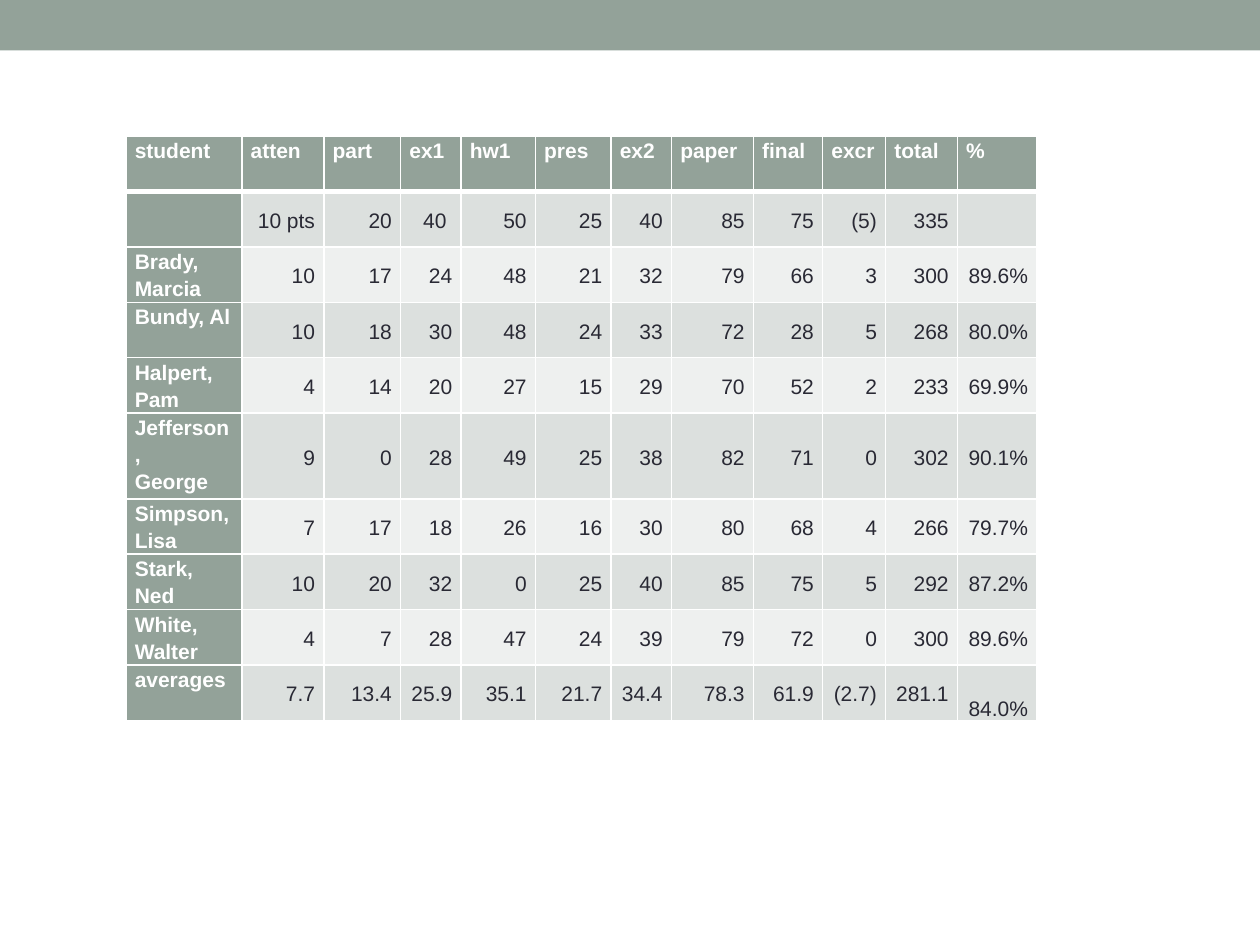
from dataclasses import dataclass

from lxml.etree import SubElement
from pptx import Presentation
from pptx.dml.color import RGBColor
from pptx.enum.shapes import MSO_SHAPE
from pptx.enum.text import MSO_ANCHOR, PP_ALIGN
from pptx.oxml.ns import qn
from pptx.util import Inches, Pt


@dataclass(frozen=True)
class Theme:
    sage: str = "93A299"
    band_dark: str = "DCE0DE"
    band_light: str = "EEF0EF"
    white: str = "FFFFFF"
    ink: str = "292934"
    font: str = "Arial"
    size: int = 12
    line_spacing: float = 1.15
    thin: int = 1
    thick: int = 3


THEME = Theme()

COLUMN_WIDTHS = [0.92, 0.65, 0.61, 0.48, 0.59, 0.6, 0.48, 0.65, 0.55, 0.5, 0.57, 0.63]
ROW_HEIGHT = 0.44
TALL_ROW_HEIGHT = 0.68
GRADES = [
    ["student", "atten", "part", "ex1", "hw1", "pres", "ex2", "paper", "final", "excr", "total", "%"],
    ["", "10 pts", "20", "40 ", "50", "25", "40", "85", "75", "(5)", "335", ""],
    ["Brady, Marcia", "10", "17", "24", "48", "21", "32", "79", "66", "3", "300", "89.6%"],
    ["Bundy, Al", "10", "18", "30", "48", "24", "33", "72", "28", "5", "268", "80.0%"],
    ["Halpert,\nPam", "4", "14", "20", "27", "15", "29", "70", "52", "2", "233", "69.9%"],
    ["Jefferson,\nGeorge", "9", "0", "28", "49", "25", "38", "82", "71", "0", "302", "90.1%"],
    ["Simpson, Lisa", "7", "17", "18", "26", "16", "30", "80", "68", "4", "266", "79.7%"],
    ["Stark, Ned", "10", "20", "32", "0", "25", "40", "85", "75", "5", "292", "87.2%"],
    ["White,\nWalter", "4", "7", "28", "47", "24", "39", "79", "72", "0", "300", "89.6%"],
    ["averages", "7.7", "13.4", "25.9", "35.1", "21.7", "34.4", "78.3", "61.9", "(2.7)", "281.1", "84.0%"],
]


def set_fill(item, color):
    item.fill.solid()
    item.fill.fore_color.rgb = RGBColor.from_string(color)


def add_top_band(page, width):
    band = page.shapes.add_shape(MSO_SHAPE.RECTANGLE, 0, 0, width, Inches(0.4))
    band.shadow.inherit = False
    set_fill(band, THEME.sage)
    band.line.fill.background()


def set_borders(cell, top, bottom):
    """Draw white borders; must run before the fill, which follows them in the XML."""
    properties = cell._tc.get_or_add_tcPr()
    widths = {"lnL": THEME.thin, "lnR": THEME.thin, "lnT": top, "lnB": bottom}
    for tag, width in widths.items():
        line = SubElement(properties, qn(f"a:{tag}"), w=str(Pt(width)))
        solid = SubElement(line, qn("a:solidFill"))
        SubElement(solid, qn("a:srgbClr"), val=THEME.white)


def write_cell(cell, text, *, color, bold=False, align=PP_ALIGN.LEFT, anchor=MSO_ANCHOR.TOP):
    cell.margin_left = cell.margin_right = Inches(0.07)
    cell.margin_top = cell.margin_bottom = 0
    cell.vertical_anchor = anchor
    if not text:
        return
    cell.text = text
    for para in cell.text_frame.paragraphs:
        para.alignment = align
        para.line_spacing = THEME.line_spacing
        for span in para.runs:
            span.font.name = THEME.font
            span.font.size = Pt(THEME.size)
            span.font.bold = bold
            span.font.color.rgb = RGBColor.from_string(color)


def add_grade_table(page, left, top):
    heights = [TALL_ROW_HEIGHT if row[0].startswith("Jefferson") else ROW_HEIGHT for row in GRADES]
    frame = page.shapes.add_table(
        len(GRADES), len(COLUMN_WIDTHS), left, top,
        Inches(sum(COLUMN_WIDTHS)), Inches(sum(heights)))
    table = frame.table
    table.first_row = table.horz_banding = False
    for column, width in zip(table.columns, COLUMN_WIDTHS):
        column.width = Inches(width)
    for row, height in zip(table.rows, heights):
        row.height = Inches(height)

    last_cell = (len(GRADES) - 1, len(COLUMN_WIDTHS) - 1)
    for r, values in enumerate(GRADES):
        band = THEME.band_dark if r % 2 else THEME.band_light
        for c, text in enumerate(values):
            cell = table.cell(r, c)
            set_borders(cell,
                        top=THEME.thick if r == 1 else THEME.thin,
                        bottom=THEME.thick if r == 0 else THEME.thin)
            if r == 0 or c == 0:
                set_fill(cell, THEME.sage)
                write_cell(cell, text, color=THEME.white, bold=True)
            else:
                set_fill(cell, band)
                anchor = MSO_ANCHOR.BOTTOM if (r, c) == last_cell else MSO_ANCHOR.MIDDLE
                write_cell(cell, text, color=THEME.ink, align=PP_ALIGN.RIGHT, anchor=anchor)


def main():
    deck = Presentation()
    deck.slide_width, deck.slide_height = Inches(10), Inches(7.5)
    page = deck.slides.add_slide(deck.slide_layouts[6])
    add_top_band(page, deck.slide_width)
    add_grade_table(page, Inches(1), Inches(1.08))
    deck.save("out.pptx")


if __name__ == "__main__":
    main()
